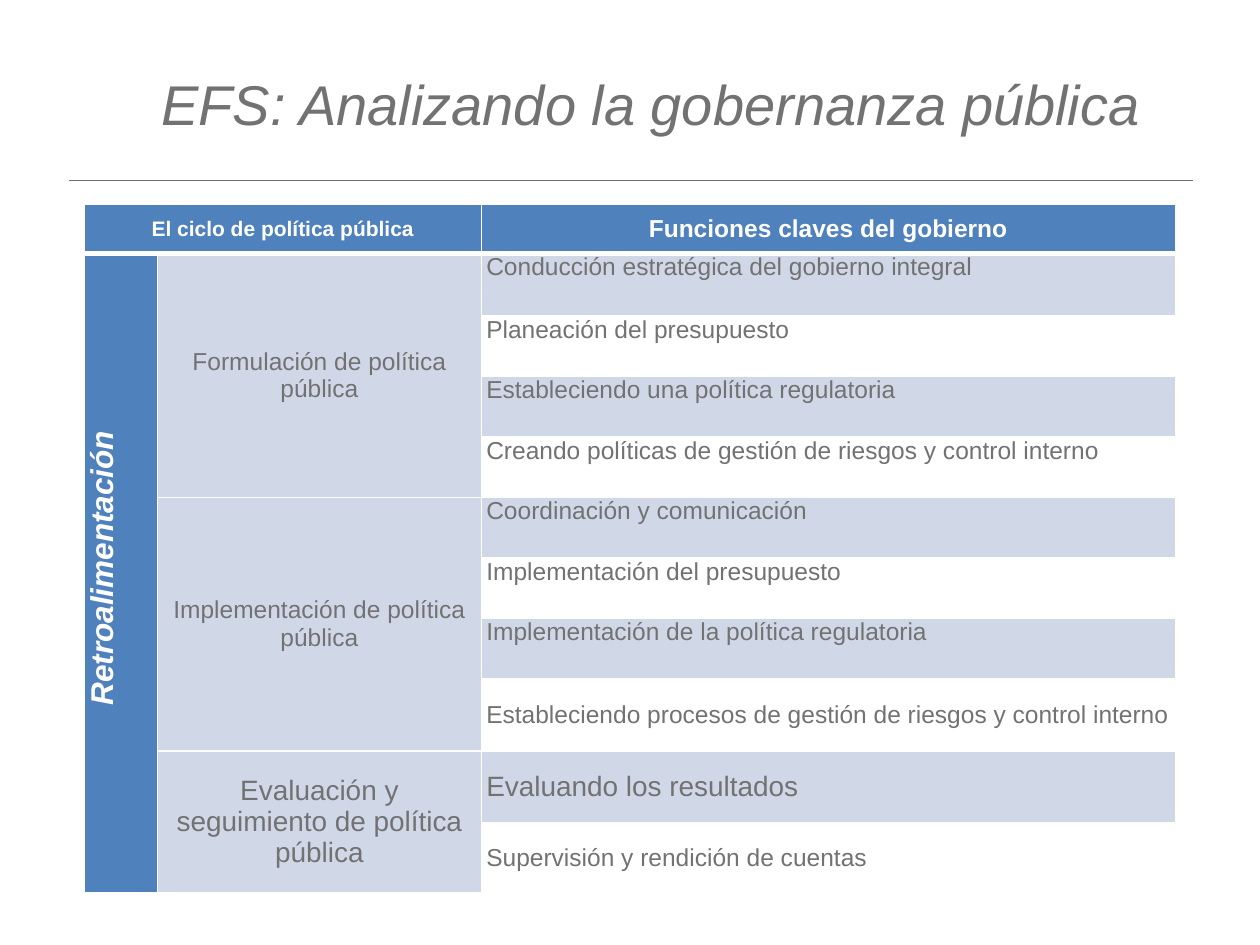
from dataclasses import dataclass
from typing import Optional

from lxml import etree
from pptx import Presentation
from pptx import util as u
from pptx.dml.color import RGBColor
from pptx.enum import shapes, text
from pptx.oxml.ns import qn


@dataclass(frozen=True)
class Theme:
    font: str = "Arial"
    ink: str = "727272"
    white: str = "FFFFFF"
    accent: str = "4F81BD"
    band: str = "D0D8E8"
    title: int = 32
    feedback: int = 18
    large: int = 16
    body: int = 14
    small: int = 12


@dataclass(frozen=True)
class Function:
    label: str
    size: int
    anchor: text.MSO_ANCHOR = text.MSO_ANCHOR.MIDDLE


@dataclass(frozen=True)
class Stage:
    label: str
    size: int
    functions: tuple[Function, ...]


@dataclass(frozen=True)
class Look:
    size: int
    fill: str
    color: str
    bold: bool = False
    italic: bool = False
    align: text.PP_ALIGN = text.PP_ALIGN.CENTER
    anchor: text.MSO_ANCHOR = text.MSO_ANCHOR.MIDDLE


THEME = Theme()
WIDTH, HEIGHT = u.Inches(10), u.Inches(7.5)
COLUMNS = (0.58, 2.57, 5.51)
ROWS = (0.39, 0.5, *[0.48] * 6, 0.57, 0.57, 0.56)
TOP = text.MSO_ANCHOR.TOP

STAGES = (
    Stage("Formulación de política pública", THEME.body, (
        Function("Conducción estratégica del gobierno integral", THEME.body, TOP),
        Function("Planeación del presupuesto", THEME.body, TOP),
        Function("Estableciendo una política regulatoria", THEME.body, TOP),
        Function("Creando políticas de gestión de riesgos y control interno", THEME.body, TOP),
    )),
    Stage("Implementación de política pública", THEME.body, (
        Function("Coordinación y comunicación", THEME.body, TOP),
        Function("Implementación del presupuesto", THEME.body, TOP),
        Function("Implementación de la política regulatoria", THEME.body, TOP),
        Function("Estableciendo procesos de gestión de riesgos y control interno", THEME.body),
    )),
    Stage("Evaluación y seguimiento de política pública", THEME.large, (
        Function("Evaluando los resultados", THEME.large),
        Function("Supervisión y rendición de cuentas", THEME.body),
    )),
)


def across(share: float) -> int:
    return round(WIDTH * share)


def down(share: float) -> int:
    return round(HEIGHT * share)


def style_run(run, size: int, color: str, bold: bool = False, italic: bool = False) -> None:
    run.font.name = THEME.font
    run.font.size = u.Pt(size)
    run.font.color.rgb = RGBColor.from_string(color)
    run.font.bold = bold
    run.font.italic = italic


def add_title(slide, wording: str) -> None:
    title = slide.shapes.title
    title.left, title.top = across(0.118), down(0.035)
    title.width, title.height = across(0.811), down(0.149)
    frame = title.text_frame
    frame.text = wording
    frame.auto_size = text.MSO_AUTO_SIZE.NONE
    frame.vertical_anchor = text.MSO_ANCHOR.MIDDLE
    frame.paragraphs[0].alignment = text.PP_ALIGN.LEFT
    style_run(frame.paragraphs[0].runs[0], THEME.title, THEME.ink, italic=True)


def add_rule(slide) -> None:
    rule = slide.shapes.add_connector(
        shapes.MSO_CONNECTOR.STRAIGHT, across(0.055), down(0.191), across(0.947), down(0.191))
    rule.line.color.rgb = RGBColor.from_string(THEME.ink)
    rule.line.width = u.Pt(0.5)
    etree.SubElement(rule._element.spPr, qn("a:effectLst"))


def add_borders(cell, top: int, bottom: int) -> None:
    properties = cell._tc.get_or_add_tcPr()
    for side, points in (("L", 1), ("R", 1), ("T", top), ("B", bottom)):
        border = etree.SubElement(properties, qn(f"a:ln{side}"), w=str(u.Pt(points)))
        fill = etree.SubElement(border, qn("a:solidFill"))
        etree.SubElement(fill, qn("a:srgbClr"), val=THEME.white)


def fill_cell(cell, wording: str, look: Look) -> None:
    cell.fill.solid()
    cell.fill.fore_color.rgb = RGBColor.from_string(look.fill)
    cell.vertical_anchor = look.anchor
    cell.text_frame.text = wording
    paragraph = cell.text_frame.paragraphs[0]
    paragraph.alignment = look.align
    style_run(paragraph.runs[0], look.size, look.color, look.bold, look.italic)


def merged(table, row: int, column: int, rows: int = 1, columns: int = 1):
    origin = table.cell(row, column)
    origin.merge(table.cell(row + rows - 1, column + columns - 1))
    return origin


def add_grid(slide):
    table = slide.shapes.add_table(
        len(ROWS), len(COLUMNS), across(0.067), down(0.216),
        u.Inches(sum(COLUMNS)), u.Inches(sum(ROWS))).table
    table.first_row = table.horz_banding = False
    for column, width in zip(table.columns, COLUMNS):
        column.width = u.Inches(width)
    for index, (row, height) in enumerate(zip(table.rows, ROWS)):
        row.height = u.Inches(height)
        for cell in row.cells:
            cell.margin_left = cell.margin_right = u.Inches(0.04)
            cell.margin_top = cell.margin_bottom = 0
            add_borders(cell, top=3 if index == 1 else 1, bottom=3 if index == 0 else 1)
            cell.fill.solid()
            cell.fill.fore_color.rgb = RGBColor.from_string(THEME.white)
    return table


def add_headings(table, cycle: str, functions: str, feedback: Optional[str] = None) -> None:
    fill_cell(merged(table, 0, 0, columns=2), cycle,
              Look(THEME.small, THEME.accent, THEME.white, bold=True))
    fill_cell(table.cell(0, 2), functions,
              Look(THEME.body, THEME.accent, THEME.white, bold=True))
    if feedback:
        side = merged(table, 1, 0, rows=len(ROWS) - 1)
        fill_cell(side, feedback,
                  Look(THEME.feedback, THEME.accent, THEME.white, bold=True, italic=True))
        side._tc.get_or_add_tcPr().set("vert", "vert270")
        side.text_frame.paragraphs[0]._p.get_or_add_pPr().set("marL", str(u.Inches(0.08)))


def add_stages(table, stages: tuple[Stage, ...]) -> None:
    row = 1
    for stage in stages:
        fill_cell(merged(table, row, 1, rows=len(stage.functions)), stage.label,
                  Look(stage.size, THEME.band, THEME.ink))
        for function in stage.functions:
            band = THEME.band if row % 2 else THEME.white
            fill_cell(table.cell(row, 2), function.label,
                      Look(function.size, band, THEME.ink,
                           align=text.PP_ALIGN.LEFT, anchor=function.anchor))
            row += 1


def main() -> None:
    deck = Presentation()
    deck.slide_width, deck.slide_height = WIDTH, HEIGHT
    slide = deck.slides.add_slide(deck.slide_layouts[5])
    add_rule(slide)
    add_title(slide, "EFS: Analizando la gobernanza pública")
    table = add_grid(slide)
    add_headings(table, "El ciclo de política pública",
                 "Funciones claves del gobierno", "Retroalimentación")
    add_stages(table, STAGES)
    deck.save("out.pptx")


if __name__ == "__main__":
    main()
